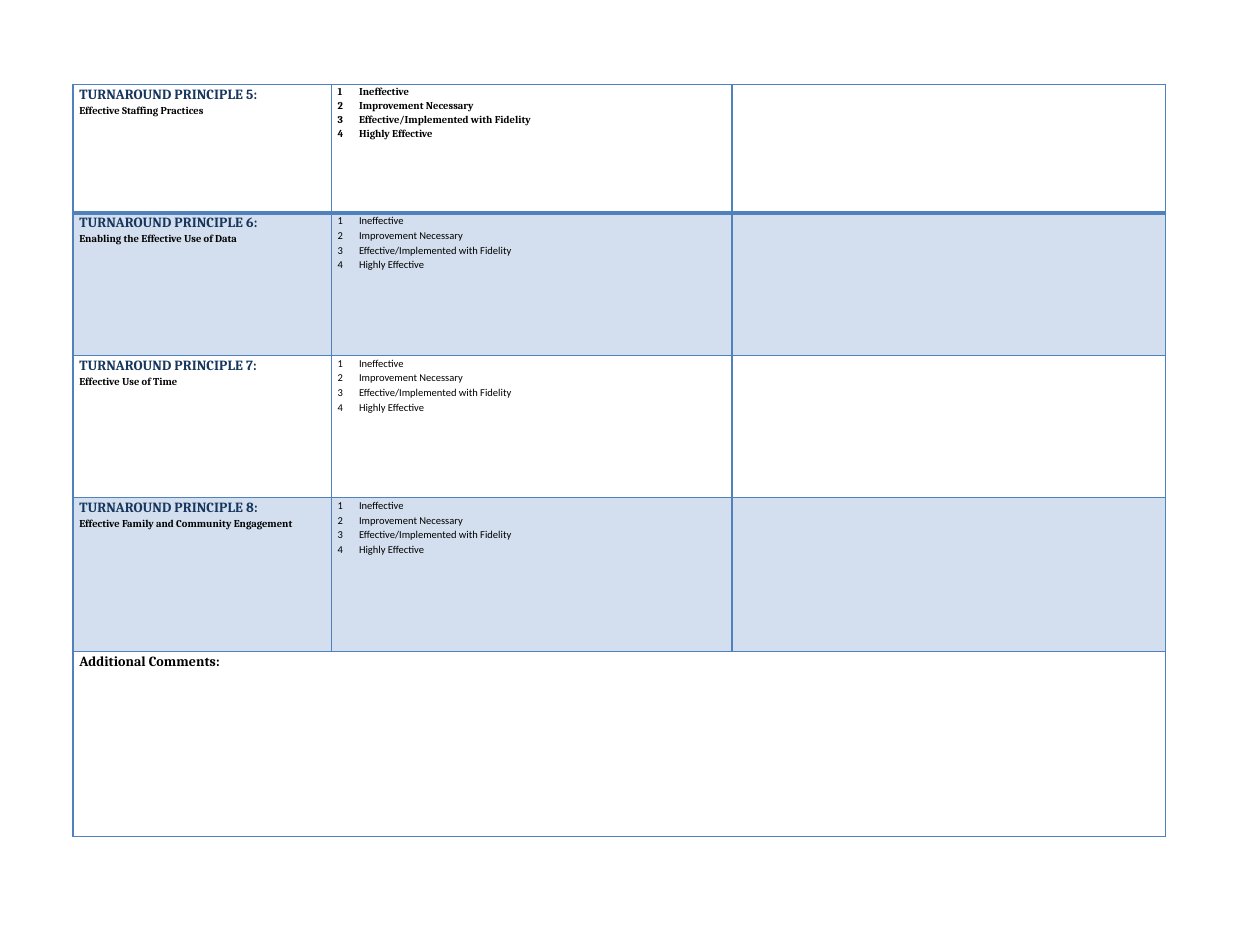
import pptx
import pptx.util
import pptx.dml.color
import pptx.oxml
import pptx.oxml.ns

Inches, Pt = pptx.util.Inches, pptx.util.Pt
RGB = pptx.dml.color.RGBColor.from_string

theme = {
    "line": "4F81BD", "band": "D3DFEE", "plain": "FFFFFF",
    "head": "17365D", "text": "000000",
    "serif": "Cambria", "sans": "Calibri",
    "large": 8, "small": 6, "thin": 1, "thick": 2.25,
}
cols = [2.05, 3.18, 3.44]
rows = [1.02, 1.13, 1.13, 1.22, 1.47]
topics = [
    "Effective Staffing Practices",
    "Enabling the Effective Use of Data",
    "Effective Use of Time",
    "Effective Family and Community Engagement",
]
scale = ["Ineffective", "Improvement Necessary",
         "Effective/Implemented with Fidelity", "Highly Effective"]


def style(para, size, face, bold, color="text"):
    para.line_spacing = 1.15
    for run in para.runs:
        run.font.size = Pt(theme[size])
        run.font.name = theme[face]
        run.font.bold = bold
        run.font.color.rgb = RGB(theme[color])


def edge(cell, sides):
    """Draw cell borders from a mapping of side (L, R, T, B) to width."""
    props = cell._tc.get_or_add_tcPr()
    for spot, (side, width) in enumerate(sides.items()):
        props.insert(spot, pptx.oxml.parse_xml(
            f'<a:ln{side} {pptx.oxml.ns.nsdecls("a")} w="{Pt(width)}">'
            f'<a:solidFill><a:srgbClr val="{theme["line"]}"/></a:solidFill>'
            f'</a:ln{side}>'))


deck = pptx.Presentation()
deck.slide_width, deck.slide_height = Inches(10), Inches(7.5)
slide = deck.slides.add_slide(deck.slide_layouts[6])
table = slide.shapes.add_table(
    len(rows), len(cols), Inches(0.58), Inches(0.67),
    Inches(sum(cols)), Inches(sum(rows))).table
table.first_row = table.horz_banding = False
for col, width in zip(table.columns, cols):
    col.width = Inches(width)
for row, height in zip(table.rows, rows):
    row.height = Inches(height)

# Grid: banded rows, with a heavy rule under the first one
for r, row in enumerate(table.rows):
    for cell in row.cells:
        cell.margin_left = cell.margin_right = Inches(0.05)
        cell.margin_top = cell.margin_bottom = 0
        cell.fill.solid()
        cell.fill.fore_color.rgb = RGB(theme["band" if r % 2 else "plain"])
        edge(cell, {"L": theme["thin"], "R": theme["thin"],
                    "T": theme["thick" if r == 1 else "thin"],
                    "B": theme["thick" if r == 0 else "thin"]})

# Principles and their rating scales
for r, topic in enumerate(topics):
    frame = table.cell(r, 0).text_frame
    frame.text = f"TURNAROUND PRINCIPLE {r + 5}:\n{topic}"
    style(frame.paragraphs[0], "large", "serif", True, "head")
    style(frame.paragraphs[1], "small", "serif", True)

    frame = table.cell(r, 1).text_frame
    frame.text = "\n".join(f"{n}\t{word}" for n, word in enumerate(scale, 1))
    for para in frame.paragraphs:
        style(para, "small", "serif" if r == 0 else "sans", r == 0)
        props = para._p.get_or_add_pPr()
        props.set("marL", str(Inches(0.17)))
        props.set("indent", str(-Inches(0.17)))

# Comments across the full width
notes = table.cell(len(topics), 0)
notes.merge(table.cell(len(topics), len(cols) - 1))
notes.text_frame.text = "Additional Comments:"
style(notes.text_frame.paragraphs[0], "large", "serif", True)

deck.save("out.pptx")
